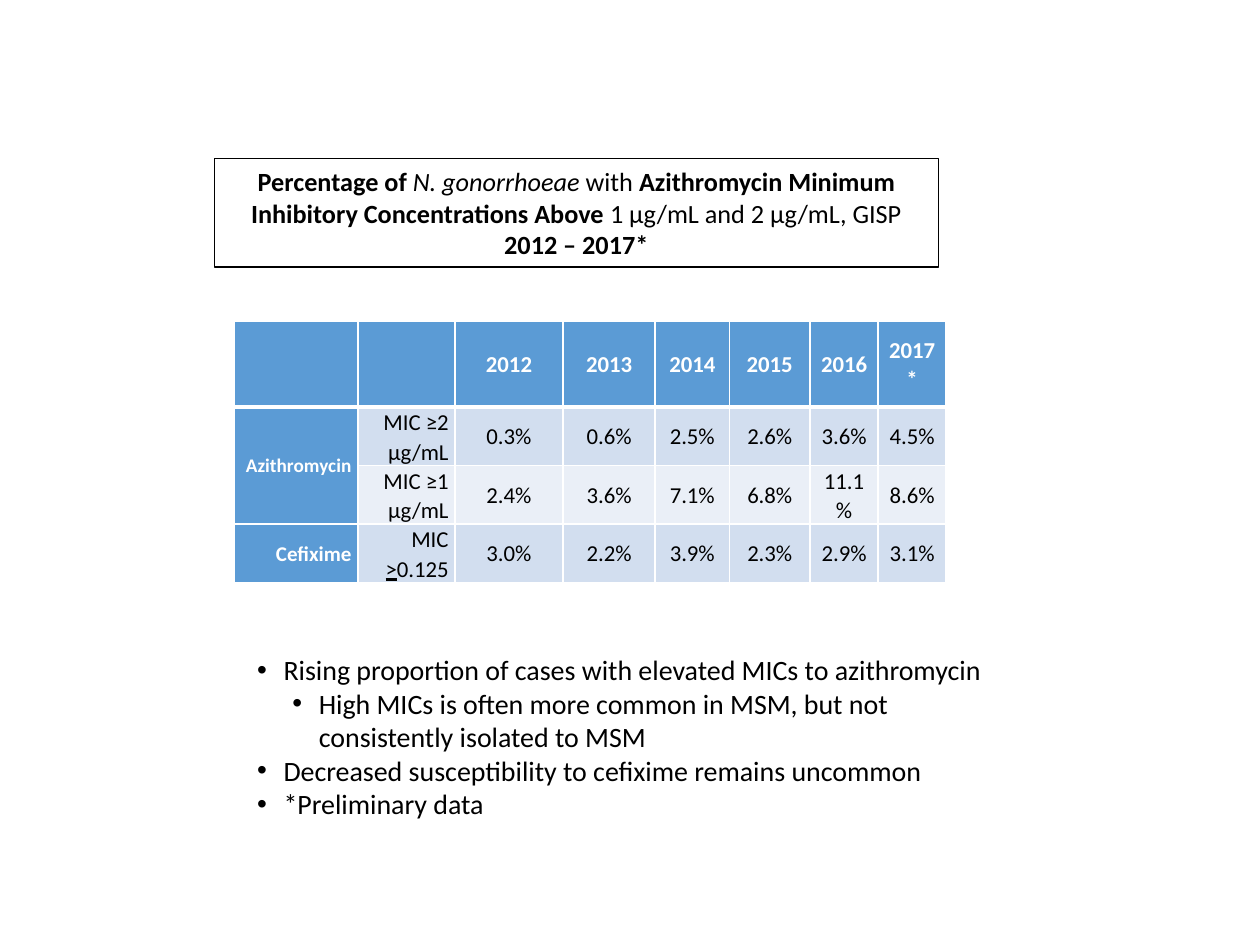
"""Build the slide on azithromycin and cefixime susceptibility trends."""
from dataclasses import dataclass

import pptx
import pptx.dml.color
import pptx.enum.text
import pptx.oxml.ns
import pptx.util
from lxml import etree

Inches = pptx.util.Inches
Pt = pptx.util.Pt
Align = pptx.enum.text.PP_ALIGN
Anchor = pptx.enum.text.MSO_ANCHOR
AutoSize = pptx.enum.text.MSO_AUTO_SIZE
qn = pptx.oxml.ns.qn


@dataclass(frozen=True)
class Theme:
    """Colours, font and type sizes of the slide."""

    font: str = "Calibri"
    ink: str = "000000"
    paper: str = "FFFFFF"
    header: str = "5B9BD5"
    bands: tuple[str, ...] = ("D2DEEF", "EAEFF7")
    title_size: int = 15
    body_size: int = 16
    cell_size: int = 13
    thin: float = 1
    thick: float = 3


@dataclass(frozen=True)
class DrugRow:
    """One table row: drug, its label size, threshold runs and yearly shares."""

    drug: str
    drug_size: int
    threshold: tuple[tuple[str, bool], ...]
    shares: tuple[str, ...]


@dataclass(frozen=True)
class Bullet:
    """One line of the list with its level and left margin in inches."""

    text: str
    level: int = 0
    margin: float = 0.21


THEME = Theme()
YEARS = ("2012", "2013", "2014", "2015", "2016", "2017*")
COLUMN_WIDTHS = (0.98, 0.77, 0.86, 0.73, 0.59, 0.64, 0.54, 0.54)
ROW_HEIGHTS = (0.68, 0.45, 0.45, 0.45)
HANGING = 0.21
HEADING = (
    ("Percentage of ", {"bold": True}),
    ("N. gonorrhoeae ", {"italic": True}),
    ("with ", {}),
    ("Azithromycin Minimum Inhibitory Concentrations Above ", {"bold": True}),
    ("1 μg/mL and 2 μg/mL, GISP ", {}),
    ("2012 – 2017*", {"bold": True}),
)
DRUG_ROWS = (
    DrugRow("Azithromycin", 11, (("MIC ≥2 μg/mL", False),),
            ("0.3%", "0.6%", "2.5%", "2.6%", "3.6%", "4.5%")),
    DrugRow("", 11, (("MIC ≥1 μg/mL", False),),
            ("2.4%", "3.6%", "7.1%", "6.8%", "11.1%", "8.6%")),
    DrugRow("Cefixime", 12, (("MIC ", False), (">", True), ("0.125", False)),
            ("3.0%", "2.2%", "3.9%", "2.3%", "2.9%", "3.1%")),
)
BULLETS = (
    Bullet("Rising proportion of cases with elevated MICs to azithromycin"),
    Bullet("High MICs is often more common in MSM, but not consistently isolated to MSM", 1, 0.49),
    Bullet("Decreased susceptibility to cefixime remains uncommon"),
    Bullet("*Preliminary data"),
)


def rgb(value: str) -> pptx.dml.color.RGBColor:
    """Turn a hex string into a colour."""
    return pptx.dml.color.RGBColor.from_string(value)


def add_text(paragraph, text: str, *, size: float, color: str = THEME.ink,
             bold: bool = False, italic: bool = False, underline: bool = False) -> None:
    """Append a formatted run to a paragraph."""
    run = paragraph.add_run()
    run.text = text
    font = run.font
    font.name, font.size = THEME.font, Pt(size)
    font.bold, font.italic, font.underline = bold, italic, underline
    font.color.rgb = rgb(color)


def place(shape, left: float, top: float, width: float, height: float) -> None:
    """Move and size a shape in inches."""
    shape.left, shape.top = Inches(left), Inches(top)
    shape.width, shape.height = Inches(width), Inches(height)


def add_heading(title) -> None:
    """Fill the outlined title box."""
    place(title, 1.7, 1.26, 5.75, 0.86)
    title.line.color.rgb = rgb(THEME.ink)
    title.line.width = Pt(0.75)
    frame = title.text_frame
    frame.word_wrap = True
    frame.auto_size = AutoSize.SHAPE_TO_FIT_TEXT
    frame.vertical_anchor = Anchor.MIDDLE
    paragraph = frame.paragraphs[0]
    paragraph.alignment = Align.CENTER
    for text, style in HEADING:
        add_text(paragraph, text, size=THEME.title_size, **style)


def style_cell(cell, fill: str, top: float, bottom: float) -> None:
    """Set the borders, fill and margins of a cell."""
    properties = cell._tc.get_or_add_tcPr()
    widths = {"a:lnL": THEME.thin, "a:lnR": THEME.thin, "a:lnT": top, "a:lnB": bottom}
    for tag, width in widths.items():
        line = etree.SubElement(properties, qn(tag), w=str(Pt(width)))
        solid = etree.SubElement(line, qn("a:solidFill"))
        etree.SubElement(solid, qn("a:srgbClr"), val=THEME.paper)
    cell.fill.solid()
    cell.fill.fore_color.rgb = rgb(fill)
    cell.vertical_anchor = Anchor.MIDDLE
    cell.margin_left = cell.margin_right = Inches(0.05)
    cell.margin_top = cell.margin_bottom = 0


def cell_paragraph(cell, alignment):
    """Return the spaced and aligned paragraph of a cell."""
    paragraph = cell.text_frame.paragraphs[0]
    paragraph.alignment = alignment
    paragraph.line_spacing = 1.07
    paragraph.space_before = paragraph.space_after = Pt(6)
    return paragraph


def add_mic_table(slide) -> None:
    """Draw the table of yearly shares by drug and threshold."""
    table = slide.shapes.add_table(
        len(ROW_HEIGHTS), len(COLUMN_WIDTHS), Inches(1.86), Inches(2.55),
        Inches(sum(COLUMN_WIDTHS)), Inches(sum(ROW_HEIGHTS))).table
    for column, width in zip(table.columns, COLUMN_WIDTHS):
        column.width = Inches(width)
    for row, height in zip(table.rows, ROW_HEIGHTS):
        row.height = Inches(height)
    for r in range(len(ROW_HEIGHTS)):
        for c in range(len(COLUMN_WIDTHS)):
            fill = THEME.header if r == 0 or c == 0 else THEME.bands[(r - 1) % 2]
            style_cell(table.cell(r, c), fill, THEME.thick if r == 1 else THEME.thin,
                       THEME.thick if r == 0 else THEME.thin)
    table.cell(1, 0).merge(table.cell(2, 0))
    for c, year in enumerate(YEARS, start=2):
        add_text(cell_paragraph(table.cell(0, c), Align.CENTER), year,
                 size=THEME.cell_size, color=THEME.paper, bold=True)
    for r, entry in enumerate(DRUG_ROWS, start=1):
        if entry.drug:
            add_text(cell_paragraph(table.cell(r, 0), Align.RIGHT), entry.drug,
                     size=entry.drug_size, color=THEME.paper, bold=True)
        threshold = cell_paragraph(table.cell(r, 1), Align.RIGHT)
        for text, underline in entry.threshold:
            add_text(threshold, text, size=THEME.cell_size, underline=underline)
        for c, share in enumerate(entry.shares, start=2):
            add_text(cell_paragraph(table.cell(r, c), Align.CENTER), share, size=THEME.cell_size)


def add_bullets(body) -> None:
    """Fill the list below the table."""
    place(body, 1.94, 5.13, 6, 1.45)
    frame = body.text_frame
    frame.word_wrap = True
    frame.auto_size = AutoSize.SHAPE_TO_FIT_TEXT
    for i, bullet in enumerate(BULLETS):
        paragraph = frame.add_paragraph() if i else frame.paragraphs[0]
        paragraph.level = bullet.level
        paragraph.space_before = Pt(0)
        properties = paragraph._p.get_or_add_pPr()
        properties.set("marL", str(Inches(bullet.margin)))
        properties.set("indent", str(-Inches(HANGING)))
        etree.SubElement(properties, qn("a:buFont"), typeface="Arial")
        etree.SubElement(properties, qn("a:buChar"), char="•")
        add_text(paragraph, bullet.text, size=THEME.body_size)


def main() -> None:
    """Build and save the presentation."""
    deck = pptx.Presentation()
    deck.slide_width, deck.slide_height = Inches(10), Inches(7.5)
    slide = deck.slides.add_slide(deck.slide_layouts[1])
    add_heading(slide.shapes.title)
    add_mic_table(slide)
    add_bullets(slide.placeholders[1])
    deck.save("out.pptx")


if __name__ == "__main__":
    main()
